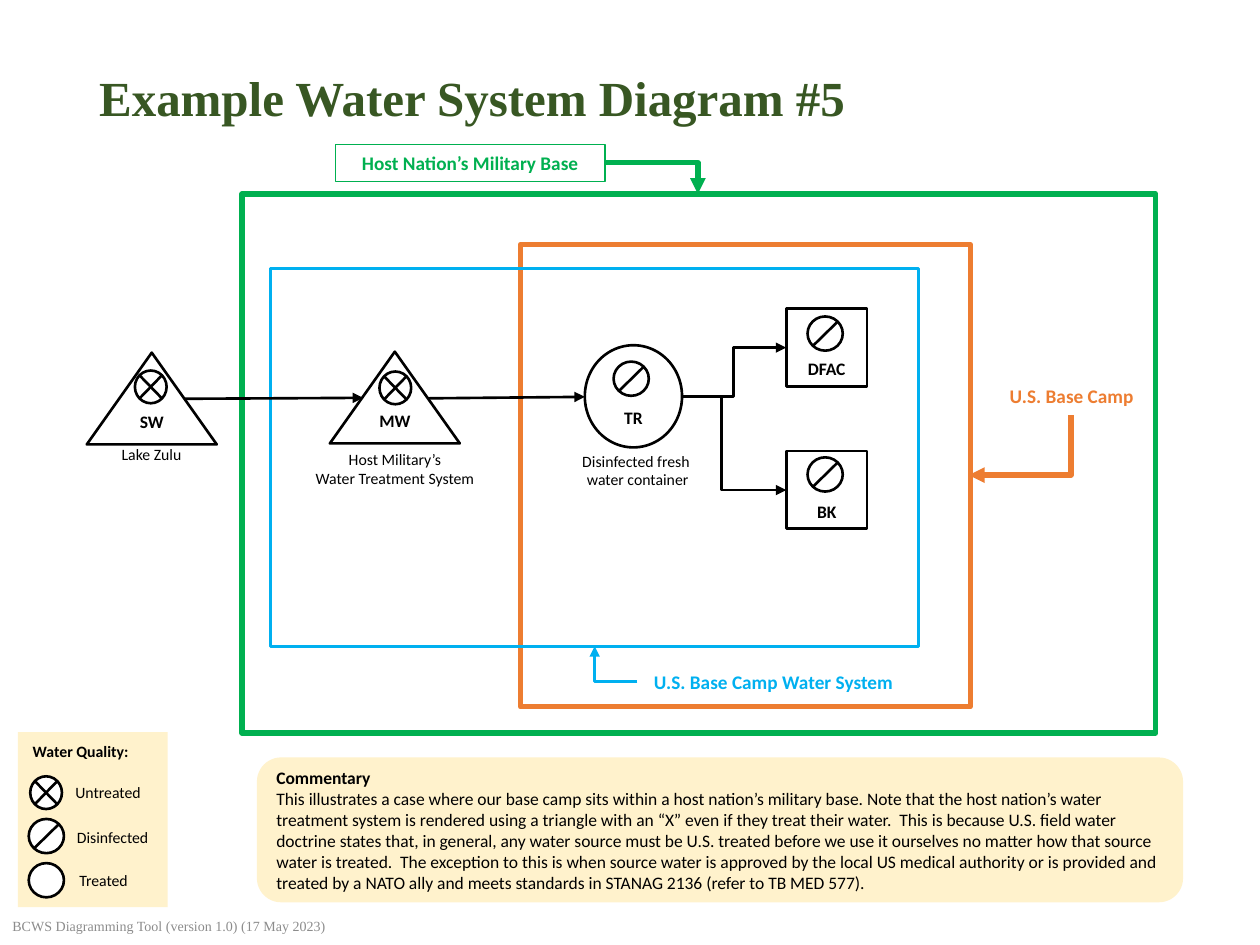
from dataclasses import dataclass
from typing import Optional

from lxml import etree
from pptx import Presentation
from pptx import util as u
from pptx.dml.color import RGBColor
from pptx.enum import shapes, text
from pptx.oxml.ns import qn

COLORS = {
    "title": "385723", "footer": "8C8C8C", "cream": "FFF2CC", "white": "FFFFFF",
    "black": "000000", "orange": "ED7D31", "blue": "00B0F0", "green": "00B050",
}
SHAPE = shapes.MSO_SHAPE
LEFT, CENTER = text.PP_ALIGN.LEFT, text.PP_ALIGN.CENTER
MIDDLE, TOP = text.MSO_ANCHOR.MIDDLE, text.MSO_ANCHOR.TOP
BELOW_SYMBOL = 0.99  # top inset that keeps a node code under its symbol, cm


@dataclass
class Box:
    x: float
    y: float
    w: float
    h: float


@dataclass
class Style:
    size: float = 10
    color: str = "black"
    bold: bool = False
    align: int = LEFT
    anchor: int = MIDDLE
    font: str = "Calibri"
    wrap: bool = True


@dataclass
class Node:
    code: str
    kind: int
    box: Box
    quality: str
    symbol: tuple
    inset: Optional[float] = None


@dataclass
class Link:
    start: tuple
    end: tuple
    color: str = "black"
    width: float = 1.5
    preset: str = "line"
    arrow: str = "tailEnd"
    bend: Optional[int] = None


def rgb(name: str) -> RGBColor:
    return RGBColor.from_string(COLORS[name])


def write(sp, paragraphs: list, style: Style) -> None:
    """Each paragraph is a string, or a list of (string, bold) runs."""
    tf = sp.text_frame
    tf.word_wrap = style.wrap
    tf.vertical_anchor = style.anchor
    for i, line in enumerate(paragraphs):
        p = tf.paragraphs[0] if i == 0 else tf.add_paragraph()
        p.alignment = style.align
        for words, bold in ([(line, style.bold)] if isinstance(line, str) else line):
            r = p.add_run()
            r.text = words
            r.font.name, r.font.size, r.font.bold = style.font, u.Pt(style.size), bold
            r.font.color.rgb = rgb(style.color)


def add_text(s, box: Box, paragraphs: list, style: Style):
    sp = s.shapes.add_textbox(u.Cm(box.x), u.Cm(box.y), u.Cm(box.w), u.Cm(box.h))
    write(sp, paragraphs, style)
    return sp


def add_box(s, kind: int, box: Box, fill: Optional[str] = None,
            line: Optional[str] = None, width: float = 1.5):
    sp = s.shapes.add_shape(kind, u.Cm(box.x), u.Cm(box.y), u.Cm(box.w), u.Cm(box.h))
    sp.shadow.inherit = False
    if fill:
        sp.fill.solid()
        sp.fill.fore_color.rgb = rgb(fill)
    else:
        sp.fill.background()
    if line:
        sp.line.color.rgb = rgb(line)
        sp.line.width = u.Pt(width)
    else:
        sp.line.fill.background()
    return sp


def add_link(s, link: Link):
    kind = shapes.MSO_CONNECTOR.STRAIGHT if link.preset == "line" else shapes.MSO_CONNECTOR.ELBOW
    c = s.shapes.add_connector(kind, *(u.Cm(v) for v in link.start + link.end))
    c.line.color.rgb = rgb(link.color)
    c.line.width = u.Pt(link.width)
    sp_pr = c._element.spPr
    geom = sp_pr.find(qn("a:prstGeom"))
    geom.set("prst", link.preset)
    if link.bend is not None:
        guides = geom.find(qn("a:avLst"))
        if guides is None:
            guides = etree.SubElement(geom, qn("a:avLst"))
        etree.SubElement(guides, qn("a:gd"), name="adj1", fmla=f"val {link.bend}")
    if link.arrow:
        etree.SubElement(sp_pr.find(qn("a:ln")), qn("a:" + link.arrow), type="triangle")
    etree.SubElement(sp_pr, qn("a:effectLst"))
    return c


def add_symbol(s, quality: str, x: float, y: float) -> None:
    """Water quality: crossed, slashed or empty circle."""
    if quality == "untreated":
        add_box(s, SHAPE.FLOWCHART_SUMMING_JUNCTION, Box(x, y, 0.64, 0.66), "white", "black")
        return
    add_box(s, SHAPE.FLOWCHART_CONNECTOR, Box(x, y, 0.71, 0.69), "white", "black")
    if quality == "disinfected":
        add_link(s, Link((x + 0.11, y + 0.59), (x + 0.61, y + 0.1), arrow=""))


def add_node(s, node: Node) -> None:
    sp = add_box(s, node.kind, node.box, "white", "black")
    if node.inset:
        sp.text_frame.margin_top = u.Cm(node.inset)
    write(sp, [node.code], Style(bold=True, align=CENTER))
    add_symbol(s, node.quality, *node.symbol)


COMMENTARY = (
    "This illustrates a case where our base camp sits within a host nation’s military base. "
    "Note that the host nation’s water treatment system is rendered using a triangle with an “X” "
    "even if they treat their water.  This is because U.S. field water doctrine states that, in "
    "general, any water source must be U.S. treated before we use it ourselves no matter how that "
    "source water is treated.  The exception to this is when source water is approved by the local "
    "US medical authority or is provided and treated by a NATO ally and meets standards in "
    "STANAG 2136 (refer to TB MED 577)."
)
ZONES = [
    (Box(10.49, 4.93, 9.07, 9.32), "orange", 3),
    (Box(5.46, 5.41, 13.06, 7.62), "blue", 1.5),
    (Box(4.88, 3.91, 18.42, 10.87), "green", 3),
]
FLOWS = [
    Link((13.72, 8), (15.85, 7.01), preset="bentConnector3"),
    Link((13.72, 8), (15.85, 9.88), preset="bentConnector3", bend=38900),
    Link((3.71, 8.04), (7.32, 8.02)),
    Link((8.61, 8.03), (11.79, 8)),
]
NODES = [
    Node("SW", SHAPE.ISOSCELES_TRIANGLE, Box(1.75, 7.11, 2.62, 1.85), "untreated", (2.72, 7.47)),
    Node("MW", SHAPE.ISOSCELES_TRIANGLE, Box(6.65, 7.09, 2.62, 1.85), "untreated", (7.65, 7.49)),
    Node("TR", SHAPE.FLOWCHART_CONNECTOR, Box(11.79, 6.96, 1.96, 2.06), "disinfected",
         (12.37, 7.29), BELOW_SYMBOL),
    Node("DFAC", SHAPE.RECTANGLE, Box(15.85, 6.22, 1.63, 1.57), "disinfected",
         (16.28, 6.38), BELOW_SYMBOL),
    Node("BK", SHAPE.RECTANGLE, Box(15.85, 9.09, 1.63, 1.57), "disinfected",
         (16.28, 9.22), BELOW_SYMBOL),
]
NODE_LABELS = [
    (Box(2.18, 8.84, 1.75, 0.64), ["Lake Zulu"]),
    (Box(6.07, 8.94, 3.78, 1.02), ["Host Military’s", "Water Treatment System"]),
    (Box(11.46, 8.97, 2.79, 1.02), ["Disinfected fresh ", "water container"]),
]
ZONE_LABELS = [
    (Box(20.07, 7.62, 3.07, 0.74), "U.S. Base Camp", "orange"),
    (Box(12.85, 13.39, 5.49, 0.74), "U.S. Base Camp Water System", "blue"),
    (Box(6.76, 2.92, 5.44, 0.74), "Host Nation’s Military Base", "green"),
]
ZONE_POINTERS = [
    Link((19.53, 9.58), (21.59, 8.36), "orange", 3, "bentConnector2", "headEnd"),
    Link((12.85, 13.74), (11.99, 13.03), "blue", 1.5, "bentConnector2"),
    Link((12.19, 3.28), (14.07, 3.91), "green", 3, "bentConnector2"),
]
LEGEND = [
    ("Untreated", (0.61, 15.65), Box(1.27, 15.65, 2.01, 0.64)),
    ("Disinfected", (0.58, 16.51), Box(1.3, 16.56, 1.98, 0.64)),
    ("Treated", (0.58, 17.4), Box(1.35, 17.42, 2.03, 0.64)),
]


def main() -> None:
    prs = Presentation()
    prs.slide_width, prs.slide_height = u.Cm(25.4), u.Cm(19.05)
    s = prs.slides.add_slide(prs.slide_layouts[6])

    # Title, footer and commentary
    add_text(s, Box(1.75, 1.02, 21.89, 1.88), ["Example Water System Diagram #5"],
             Style(28, "title", True, font="Times New Roman"))
    add_text(s, Box(0, 18.29, 15.24, 0.74), ["BCWS Diagramming Tool (version 1.0) (17 May 2023)"],
             Style(8, "footer", font="Times New Roman"))
    note = add_box(s, SHAPE.ROUNDED_RECTANGLE, Box(5.18, 15.27, 18.67, 2.92), "cream")
    write(note, [[("Commentary", True)], COMMENTARY], Style())

    # Zones, then water flows under the nodes
    for box, color, width in ZONES:
        add_box(s, SHAPE.RECTANGLE, box, line=color, width=width)
    for flow in FLOWS:
        add_link(s, flow)
    for node in NODES:
        add_node(s, node)
    for box, lines in NODE_LABELS:
        add_text(s, box, lines, Style(9, align=CENTER, wrap=False))

    # Zone names and their pointers
    for box, name, color in ZONE_LABELS:
        sp = add_text(s, box, [name], Style(11, color, True, CENTER, TOP))
        if color == "green":
            sp.line.color.rgb = rgb(color)
            sp.line.width = u.Pt(0.75)
    for pointer in ZONE_POINTERS:
        add_link(s, pointer)

    # Legend
    add_box(s, SHAPE.RECTANGLE, Box(0.36, 14.76, 3.02, 3.53), "cream")
    add_text(s, Box(0.41, 14.83, 2.97, 0.64), ["Water Quality:"], Style(9, bold=True))
    for name, place, box in LEGEND:
        add_symbol(s, name.lower(), *place)
        add_text(s, box, [name], Style(9))

    prs.save("out.pptx")


if __name__ == "__main__":
    main()
